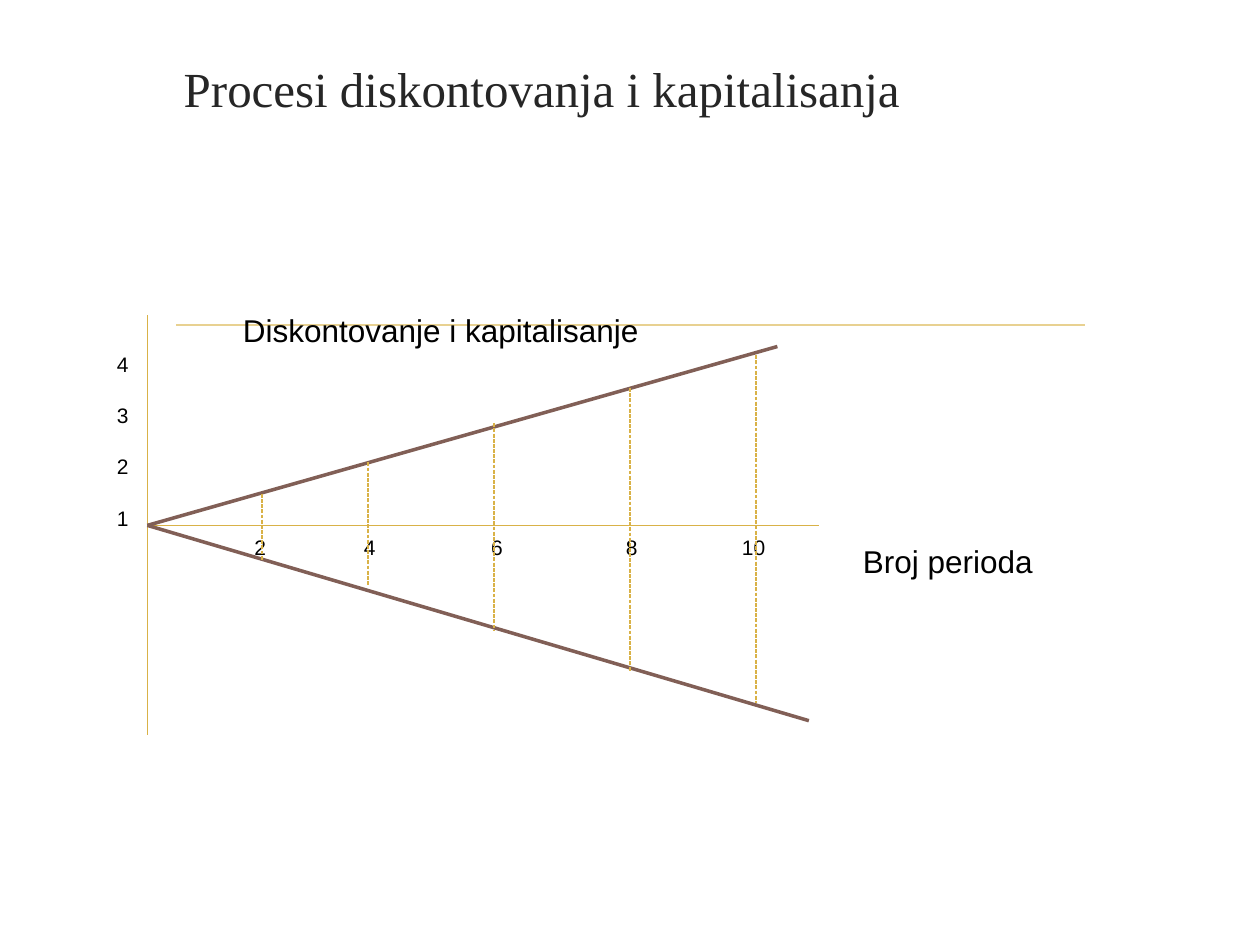
import pptx
import pptx.dml.color
import pptx.enum.dml
import pptx.enum.shapes
import pptx.enum.text
import pptx.oxml.ns
import pptx.util
from dataclasses import dataclass
from lxml import etree
from pptx.util import Inches


@dataclass(frozen=True)
class Theme:
    title_font: str = "Times New Roman"
    body_font: str = "Arial"
    title_size: int = 28
    caption_size: int = 18
    label_size: int = 12
    title_color: str = "262626"
    text_color: str = "000000"
    rule_color: str = "E8D191"
    axis_color: str = "D9B247"
    curve_color: str = "815F56"


THEME = Theme()
ORIGIN = (1.17, 4.17)
# Period line: x, top and bottom
PERIOD_LINES = [
    (2.08, 3.92, 4.45),
    (2.92, 3.67, 4.65),
    (3.92, 3.36, 5),
    (5, 3.08, 5.33),
    (6, 2.82, 5.58),
]
PERIOD_TABS = [0.87, 1.88, 2.95, 3.87]


def add_span(para, text, size, font=THEME.body_font, color=THEME.text_color):
    span = para.add_run()
    span.text = text
    span.font.name = font
    span.font.size = pptx.util.Pt(size)
    span.font.color.rgb = pptx.dml.color.RGBColor.from_string(color)


def add_line(page, start, end, color, width, dashed=False):
    line = page.shapes.add_connector(
        pptx.enum.shapes.MSO_CONNECTOR.STRAIGHT,
        *(Inches(value) for value in (*start, *end)))
    line.line.color.rgb = pptx.dml.color.RGBColor.from_string(color)
    line.line.width = pptx.util.Pt(width)
    if dashed:
        line.line.dash_style = pptx.enum.dml.MSO_LINE.SQUARE_DOT
    etree.SubElement(line._element.spPr, pptx.oxml.ns.qn("a:effectLst"))


def add_text(page, place, lines, size, gap=0, tabs=()):
    """Add a text box with one paragraph per line, gap points apart."""
    box = page.shapes.add_textbox(*(Inches(value) for value in place))
    frame = box.text_frame
    frame.word_wrap = True
    for index, text in enumerate(lines):
        para = frame.paragraphs[0] if index == 0 else frame.add_paragraph()
        if index:
            para.space_before = pptx.util.Pt(gap)
        if tabs:
            set_tabs(para, tabs)
        add_span(para, text, size)
    return box


def set_tabs(para, stops):
    properties = para._p.get_or_add_pPr()
    tab_list = etree.SubElement(properties, pptx.oxml.ns.qn("a:tabLst"))
    for stop in stops:
        etree.SubElement(tab_list, pptx.oxml.ns.qn("a:tab"),
                         pos=str(Inches(stop)), algn="l")


def fill_title(page, text):
    title = page.shapes.title
    title.left, title.top = Inches(0.83), Inches(0.31)
    title.width, title.height = Inches(6.94), Inches(0.77)
    frame = title.text_frame
    frame.auto_size = pptx.enum.text.MSO_AUTO_SIZE.NONE
    frame.vertical_anchor = pptx.enum.text.MSO_ANCHOR.MIDDLE
    para = frame.paragraphs[0]
    para.alignment = pptx.enum.text.PP_ALIGN.CENTER
    add_span(para, text, THEME.title_size, THEME.title_font, THEME.title_color)


def add_axes_and_curves(page):
    add_line(page, (ORIGIN[0], 2.5), (ORIGIN[0], 5.83), THEME.axis_color, 0.75)
    add_line(page, ORIGIN, (6.5, ORIGIN[1]), THEME.axis_color, 0.75)
    for end in ((6.17, 2.75), (6.42, 5.72)):
        add_line(page, ORIGIN, end, THEME.curve_color, 2)


def add_labels(page):
    add_text(page, (6.75, 4.25, 1.56, 0.4), ["Broj perioda"], THEME.caption_size)
    values = add_text(page, (0.83, 2.54, 0.25, 1.72), ["4", "3", "2", "1"],
                      THEME.label_size, gap=15)
    values.text_frame.vertical_anchor = pptx.enum.text.MSO_ANCHOR.BOTTOM
    add_text(page, (1.83, 2.42, 4.17, 0.4), ["Diskontovanje i kapitalisanje"],
             THEME.caption_size)
    periods = "\t".join(str(period) for period in range(2, 11, 2))
    add_text(page, (1.92, 4.19, 4.36, 0.3), [periods], THEME.label_size,
             tabs=PERIOD_TABS)


def main():
    deck = pptx.Presentation()
    deck.slide_width, deck.slide_height = Inches(10), Inches(7.5)
    page = deck.slides.add_slide(deck.slide_layouts.get_by_name("Title Only"))
    fill_title(page, "Procesi diskontovanja i kapitalisanja")
    add_line(page, (1.4, 2.58), (8.61, 2.58), THEME.rule_color, 1.25)
    add_axes_and_curves(page)
    add_labels(page)
    for x, top, bottom in PERIOD_LINES:
        add_line(page, (x, top), (x, bottom), THEME.axis_color, 0.75, dashed=True)
    deck.save("out.pptx")


if __name__ == "__main__":
    main()
